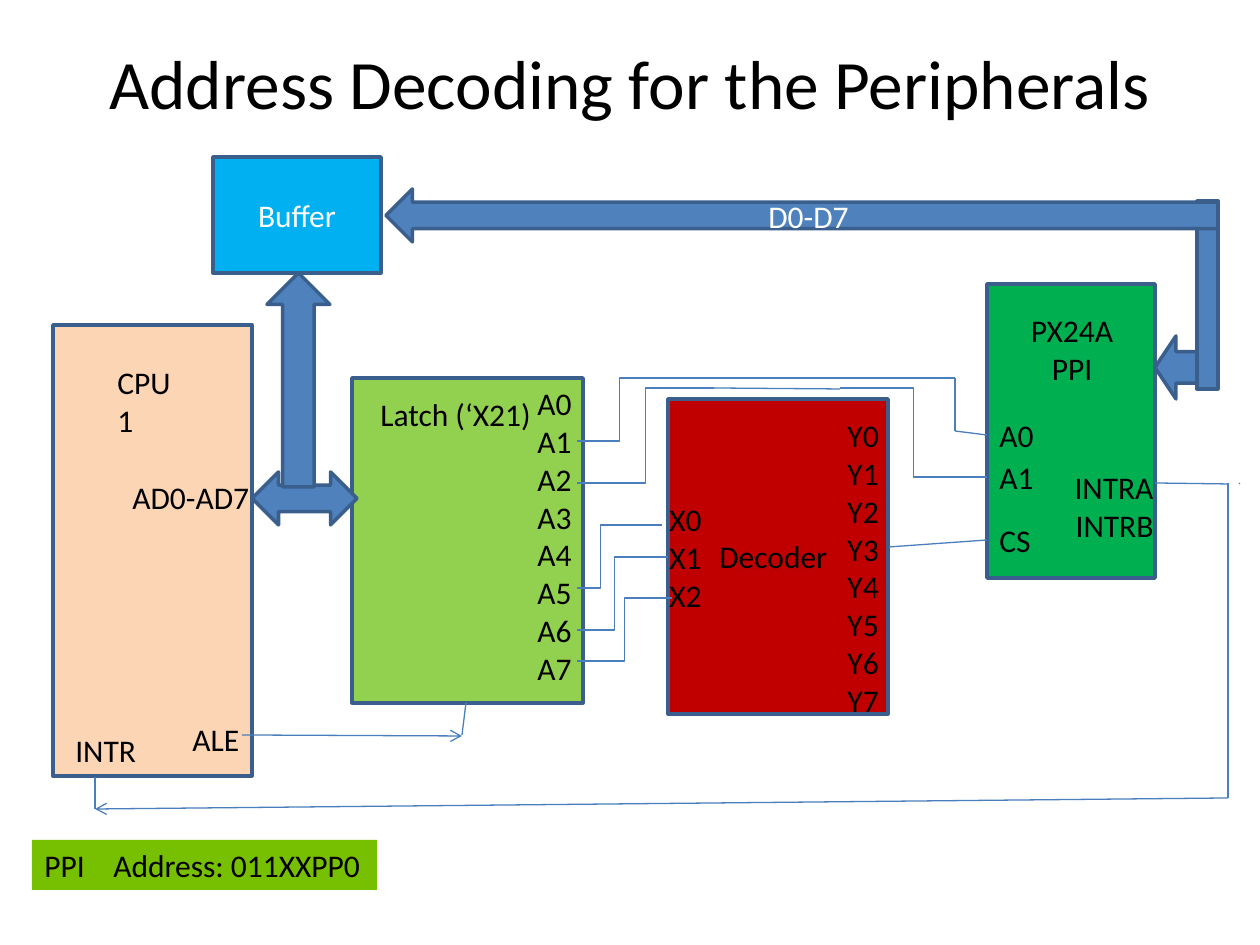
from dataclasses import dataclass

from lxml import etree
from pptx import Presentation
from pptx import util as u
from pptx.dml.color import RGBColor
from pptx.enum import shapes, text
from pptx.oxml.ns import qn

PX = 914400 / 126
FONT = "Calibri"
BLACK, WHITE = "000000", "FFFFFF"
OUTLINE, BUS, WIRE = "3A5F8C", "4F81BD", "4B7EBC"
SHAPE = shapes.MSO_SHAPE
ALIGN = text.PP_ALIGN


@dataclass(frozen=True)
class Block:
    kind: int
    left: int
    top: int
    width: int
    height: int
    fill: str = BUS
    caption: str = ""


@dataclass(frozen=True)
class Label:
    lines: str
    left: int
    top: int
    width: int
    height: int
    align: int = ALIGN.LEFT


@dataclass(frozen=True)
class Wire:
    x1: int
    y1: int
    x2: int
    y2: int
    arrow: bool = False
    bend: float = 0


BLOCKS = [
    Block(SHAPE.RECTANGLE, 53, 325, 199, 451, "FCD5B5"),
    Block(SHAPE.RECTANGLE, 987, 284, 168, 294, "00B050"),
    Block(SHAPE.RECTANGLE, 352, 378, 231, 325, "92D050"),
    Block(SHAPE.RECTANGLE, 668, 399, 220, 315, "C00000"),
    Block(SHAPE.LEFT_RIGHT_ARROW, 252, 472, 105, 53),
    Block(SHAPE.LEFT_ARROW, 1155, 336, 42, 63),
    Block(SHAPE.RECTANGLE, 1197, 201, 21, 188),
    Block(SHAPE.LEFT_ARROW, 386, 189, 832, 53, caption="D0-D7"),
    Block(SHAPE.RECTANGLE, 213, 157, 168, 116, "00B0F0", "Buffer"),
    Block(SHAPE.UP_ARROW, 267, 273, 63, 214),
]

LABELS = [
    Label("CPU1", 105, 357, 89, 50),
    Label("PX24A\nPPI", 1018, 305, 108, 89, ALIGN.CENTER),
    Label("A0", 987, 410, 60, 50),
    Label("A1", 987, 452, 60, 50),
    Label("CS", 987, 515, 57, 50),
    Label("INTRA\nINTRB", 1061, 462, 105, 89, ALIGN.RIGHT),
    Label("Latch (‘X21)", 368, 389, 176, 50),
    Label("Decoder", 707, 531, 135, 50),
    Label("\n".join(f"Y{i}" for i in range(8)), 835, 410, 57, 318),
    Label("\n".join(f"X{i}" for i in range(3)), 657, 494, 58, 127),
    Label("\n".join(f"A{i}" for i in range(8)), 525, 378, 60, 318),
    Label("AD0-AD7", 120, 472, 144, 50),
    Label("ALE", 180, 714, 73, 50),
    Label("INTR", 63, 725, 87, 50),
]
ADDRESS = Label("PPI\tAddress: 011XXPP0", 32, 840, 345, 50)
ADDRESS_TAB = 69

WIRES = [
    Wire(889, 547, 987, 540),
    Wire(672, 598, 577, 661, bend=0.5),
    Wire(668, 557, 577, 630, bend=0.59),
    Wire(662, 525, 577, 588, bend=0.72),
    Wire(955, 378, 630, 378),
    Wire(987, 435, 955, 431),
    Wire(987, 477, 840, 388, bend=0.5),
    Wire(577, 483, 714, 388, bend=0.5),
    Wire(714, 388, 840, 389),
    Wire(577, 441, 662, 378, bend=0.5),
    Wire(242, 735, 462, 736, arrow=True),
    Wire(462, 735, 466, 703),
    Wire(1155, 483, 1228, 484),
    Wire(1239, 484, 1240, 483),
    Wire(1228, 483, 1228, 798),
    Wire(955, 378, 955, 431),
    Wire(1228, 798, 95, 809, arrow=True),
    Wire(95, 809, 95, 777),
]


def px(*lengths: int) -> list[u.Emu]:
    return [u.Emu(round(length * PX)) for length in lengths]


def paint(target, color: str) -> None:
    target.rgb = RGBColor.from_string(color)


def write(frame, lines: str, color: str, align: int, size: float = 18) -> None:
    frame.text = lines
    for para in frame.paragraphs:
        para.alignment = align
        for span in para.runs:
            for name, value in {"name": FONT, "size": u.Pt(size)}.items():
                setattr(span.font, name, value)
            paint(span.font.color, color)


def set_frame(frame, **values) -> None:
    for name, value in values.items():
        setattr(frame, name, value)


def draw_block(page, block: Block) -> None:
    box = page.shapes.add_shape(
        block.kind, *px(block.left, block.top, block.width, block.height))
    box.shadow.inherit = False
    box.fill.solid()
    paint(box.fill.fore_color, block.fill)
    paint(box.line.color, OUTLINE)
    box.line.width = u.Pt(2)
    if block.caption:
        set_frame(box.text_frame, vertical_anchor=text.MSO_ANCHOR.MIDDLE)
        write(box.text_frame, block.caption, WHITE, ALIGN.CENTER)


def draw_label(page, label: Label):
    box = page.shapes.add_textbox(
        *px(label.left, label.top, label.width, label.height))
    write(box.text_frame, label.lines, BLACK, label.align)
    set_frame(box.text_frame, word_wrap=False,
              auto_size=text.MSO_AUTO_SIZE.SHAPE_TO_FIT_TEXT)
    return box


def draw_address(page) -> None:
    box = draw_label(page, ADDRESS)
    box.text_frame.word_wrap = True
    box.fill.solid()
    paint(box.fill.fore_color, "77BF01")
    props = box.text_frame.paragraphs[0]._p.get_or_add_pPr()
    stops = etree.SubElement(props, qn("a:tabLst"))
    etree.SubElement(stops, qn("a:tab"), pos=str(px(ADDRESS_TAB)[0]), algn="l")


def draw_wire(page, wire: Wire) -> None:
    kind = shapes.MSO_CONNECTOR.ELBOW if wire.bend else shapes.MSO_CONNECTOR.STRAIGHT
    line = page.shapes.add_connector(kind, *px(wire.x1, wire.y1, wire.x2, wire.y2))
    paint(line.line.color, WIRE)
    line.line.width = u.Pt(0.75)
    props = line._element.spPr
    if wire.arrow:
        etree.SubElement(props.find(qn("a:ln")), qn("a:tailEnd"), type="arrow")
    if wire.bend:
        guides = props.find(qn("a:prstGeom")).find(qn("a:avLst"))
        etree.SubElement(guides, qn("a:gd"), name="adj1",
                         fmla=f"val {round(wire.bend * 100000)}")
    etree.SubElement(props, qn("a:effectLst"))


def draw_title(page) -> None:
    title = page.shapes.title
    place = px(63, 38, 1134, 88)
    for name, value in zip(("left", "top", "width", "height"), place):
        setattr(title, name, value)
    set_frame(title.text_frame, vertical_anchor=text.MSO_ANCHOR.MIDDLE,
              auto_size=text.MSO_AUTO_SIZE.NONE)
    write(title.text_frame, "Address Decoding for the Peripherals",
          BLACK, ALIGN.CENTER, 39.6)


def main() -> None:
    deck = Presentation()
    deck.slide_width, deck.slide_height = px(1260, 945)
    page = deck.slides.add_slide(deck.slide_layouts[5])
    draw_title(page)
    for block in BLOCKS:
        draw_block(page, block)
    for label in LABELS:
        draw_label(page, label)
    draw_address(page)
    for wire in WIRES:
        draw_wire(page, wire)
    deck.save("out.pptx")


if __name__ == "__main__":
    main()
